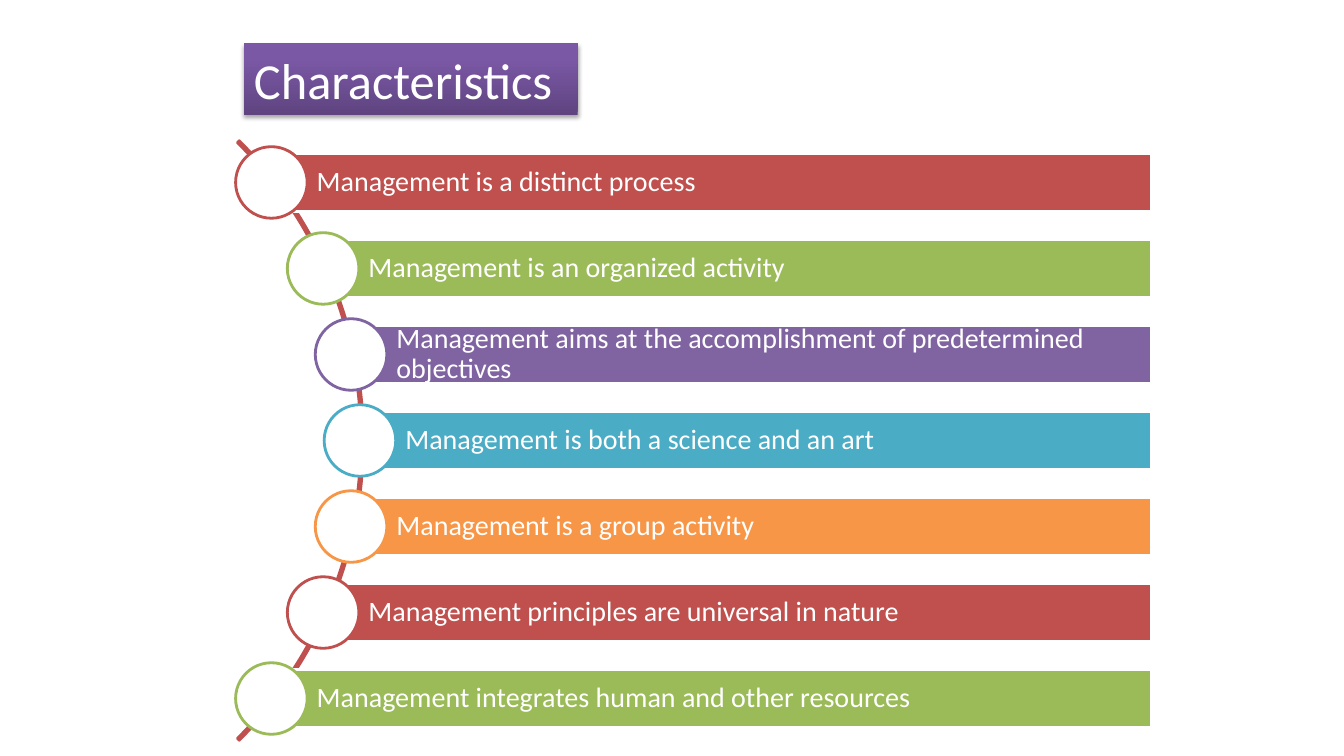
from copy import deepcopy
from dataclasses import dataclass
from math import sqrt

from lxml import etree
from pptx import Presentation
from pptx.dml.color import RGBColor
from pptx.enum.shapes import MSO_SHAPE
from pptx.enum.text import MSO_ANCHOR, MSO_AUTO_SIZE, PP_ALIGN
from pptx.oxml.ns import qn
from pptx.shapes.autoshape import Shape
from pptx.slide import Slide
from pptx.util import Inches, Pt

RECTANGLE = MSO_SHAPE.RECTANGLE
OVAL = MSO_SHAPE.OVAL
BLOCK_ARC = MSO_SHAPE.BLOCK_ARC
MIDDLE = MSO_ANCHOR.MIDDLE
LEFT = PP_ALIGN.LEFT
FIT_SHAPE = MSO_AUTO_SIZE.SHAPE_TO_FIT_TEXT

FONT = "Calibri"
WHITE = "FFFFFF"
RED, GREEN, PURPLE, BLUE, ORANGE = "C0504D", "9BBB59", "8064A2", "4BACC6", "F79646"

ARC_CENTER_X, ARC_CENTER_Y = -0.6, 4.37
ARC_SIZE = 8.41
CURVE_RADIUS = 4.17
ROW_PITCH = 5.12 / 6
BAR_RIGHT, BAR_HEIGHT = 11.42, 0.57
CIRCLE_SIZE = 0.71


@dataclass
class Characteristic:
    text: str
    color: str


CHARACTERISTICS = [
    Characteristic("Management is a distinct process", RED),
    Characteristic("Management is an organized activity", GREEN),
    Characteristic("Management aims at the accomplishment of predetermined objectives", PURPLE),
    Characteristic("Management is both a science and an art", BLUE),
    Characteristic("Management is a group activity", ORANGE),
    Characteristic("Management principles are universal in nature", RED),
    Characteristic("Management integrates human and other resources", GREEN),
]


def rgb(color: str) -> RGBColor:
    return RGBColor.from_string(color)


def add_shape(slide: Slide, kind: MSO_SHAPE, left: float, top: float, width: float,
              height: float, fill: str | None, line: str | None) -> Shape:
    shape = slide.shapes.add_shape(
        kind, Inches(left), Inches(top), Inches(width), Inches(height))
    shape.shadow.inherit = False
    if fill:
        shape.fill.solid()
        shape.fill.fore_color.rgb = rgb(fill)
    else:
        shape.fill.background()
    if line:
        shape.line.color.rgb = rgb(line)
        shape.line.width = Pt(2)
    else:
        shape.line.fill.background()
    return shape


def write_text(shape: Shape, text: str, size: int) -> None:
    paragraph = shape.text_frame.paragraphs[0]
    paragraph.text = text
    paragraph.alignment = LEFT
    paragraph.font.name = FONT
    paragraph.font.size = Pt(size)
    paragraph.font.color.rgb = rgb(WHITE)


def add_title(slide: Slide) -> None:
    title = add_shape(slide, RECTANGLE, 2.42, 0.43, 3.31, 0.71, None, None)
    write_text(title, "Characteristics", 36)
    title.text_frame.word_wrap = False
    title.text_frame.auto_size = FIT_SHAPE

    title.fill.gradient()
    title.fill.gradient_angle = 90
    properties = title._element.spPr
    stop_list = properties.find(qn("a:gradFill")).find(qn("a:gsLst"))
    stop_list.insert(1, deepcopy(stop_list[0]))
    stops = [(0, "5F4480"), (0.8, "7B58A6"), (1, "7C57A8")]
    for stop, (position, color) in zip(title.fill.gradient_stops, stops):
        stop.position = position
        stop.color.rgb = rgb(color)

    effects = properties.find(qn("a:effectLst"))
    shadow = etree.SubElement(
        effects, qn("a:outerShdw"), blurRad=str(Pt(3.1)), dist=str(Pt(1.8)),
        dir="5400000", rotWithShape="0")
    shadow_color = etree.SubElement(shadow, qn("a:srgbClr"), val="000000")
    etree.SubElement(shadow_color, qn("a:alpha"), val="35000")


def add_arc(slide: Slide) -> None:
    arc = add_shape(slide, BLOCK_ARC, ARC_CENTER_X - ARC_SIZE / 2,
                    ARC_CENTER_Y - ARC_SIZE / 2, ARC_SIZE, ARC_SIZE, None, RED)
    for index, value in enumerate((189, 27, 0.003)):
        arc.adjustments[index] = value


def add_characteristic(slide: Slide, item: Characteristic, offset: float) -> None:
    center_x = ARC_CENTER_X + sqrt(CURVE_RADIUS ** 2 - offset ** 2)
    center_y = ARC_CENTER_Y + offset
    bar = add_shape(slide, RECTANGLE, center_x, center_y - BAR_HEIGHT / 2,
                    BAR_RIGHT - center_x, BAR_HEIGHT, item.color, WHITE)
    write_text(bar, item.text, 20)
    frame = bar.text_frame
    frame.word_wrap = True
    frame.vertical_anchor = MIDDLE
    frame.margin_left = Inches(0.45)
    frame.margin_top = frame.margin_right = frame.margin_bottom = Inches(0.06)
    frame.paragraphs[0].line_spacing = 0.9
    add_shape(slide, OVAL, center_x - CIRCLE_SIZE / 2, center_y - CIRCLE_SIZE / 2,
              CIRCLE_SIZE, CIRCLE_SIZE, WHITE, item.color)


def main() -> None:
    presentation = Presentation()
    presentation.slide_width = Inches(13.33)
    presentation.slide_height = Inches(7.5)
    slide = presentation.slides.add_slide(presentation.slide_layouts[6])
    add_arc(slide)
    middle_row = len(CHARACTERISTICS) // 2
    for row, item in enumerate(CHARACTERISTICS):
        add_characteristic(slide, item, (row - middle_row) * ROW_PITCH)
    add_title(slide)
    presentation.save("out.pptx")


if __name__ == "__main__":
    main()
